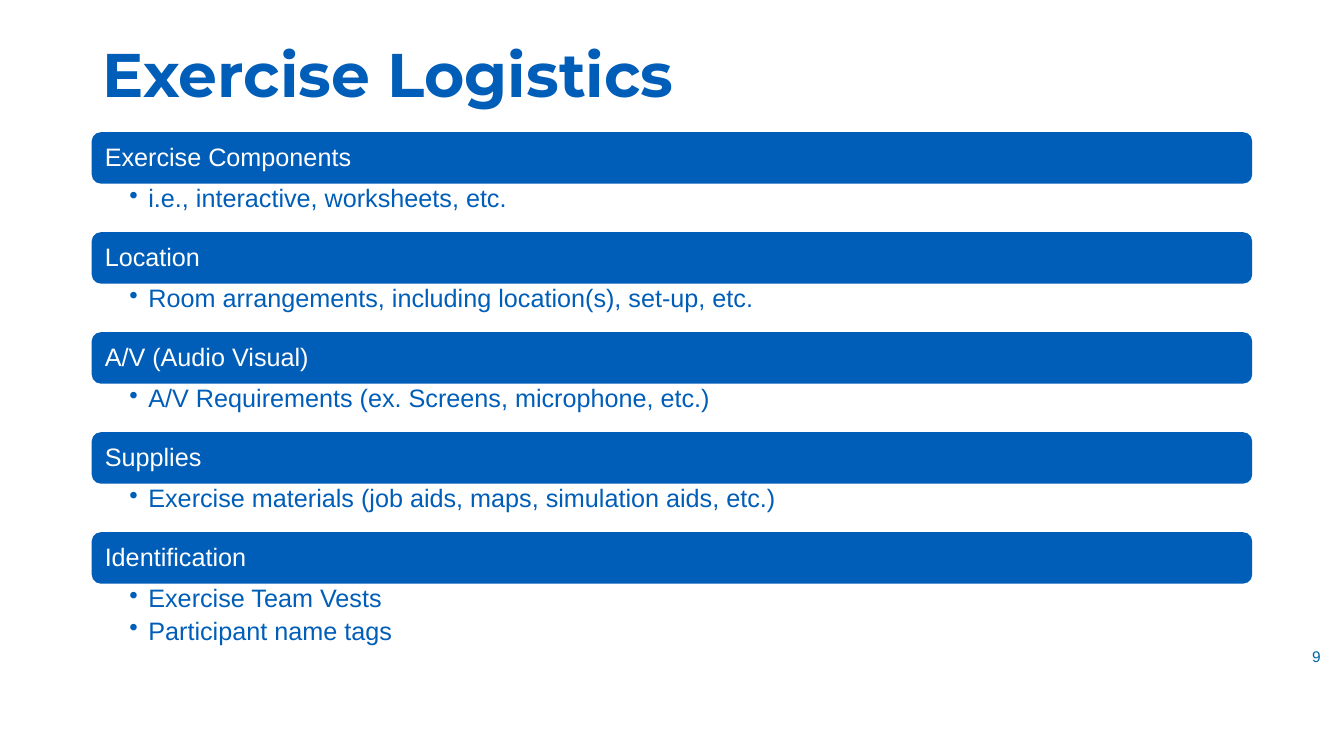
"""Build the Exercise Logistics slide."""
from dataclasses import dataclass
from typing import Any

import pptx
from lxml import etree
from pptx import util as u
from pptx.dml.color import RGBColor
from pptx.enum import shapes, text
from pptx.oxml import ns

BLUE = RGBColor(0x00, 0x5E, 0xB8)
NUMBER_BLUE = RGBColor(0x00, 0x63, 0xA6)
WHITE = RGBColor(0xFF, 0xFF, 0xFF)

LEFT, WIDTH = 2.33, 29.21
FIRST_TOP, PITCH = 3.35, 2.52
HEADING_HEIGHT = 1.26
BULLET_INDENT = u.Cm(0.48)


@dataclass(frozen=True)
class Topic:
    """A heading bar and the details under it."""
    heading: str
    details: tuple[str, ...]
    details_height: float = 1.26


@dataclass(frozen=True)
class Style:
    """Character and paragraph format of a text."""
    size: float
    color: RGBColor
    face: str = "Arial"
    bold: bool = False
    align: text.PP_ALIGN = text.PP_ALIGN.LEFT
    spacing: float = 0.9
    after: float = 0
    bulleted: bool = False


TITLE = Style(44, BLUE, face="Montserrat", bold=True)
HEADING = Style(18, WHITE)
DETAIL = Style(18, BLUE, after=4, bulleted=True)
NUMBER = Style(11, NUMBER_BLUE, align=text.PP_ALIGN.CENTER, spacing=1.0)

HEADING_FRAME = {
    "vertical_anchor": text.MSO_ANCHOR.MIDDLE,
    "margin_left": u.Cm(0.25), "margin_right": u.Cm(0.25),
    "margin_top": u.Cm(0.25), "margin_bottom": u.Cm(0.25),
}
DETAIL_FRAME = {
    "vertical_anchor": text.MSO_ANCHOR.TOP,
    "margin_left": u.Cm(0.93), "margin_right": u.Cm(0.36),
    "margin_top": u.Cm(0.08), "margin_bottom": u.Cm(0.08),
}
MIDDLE_FRAME = {"vertical_anchor": text.MSO_ANCHOR.MIDDLE}

TOPICS = (
    Topic("Exercise Components", ("i.e., interactive, worksheets, etc.",)),
    Topic("Location", ("Room arrangements, including location(s), set-up, etc.",)),
    Topic("A/V (Audio Visual)", ("A/V Requirements (ex. Screens, microphone, etc.)",)),
    Topic("Supplies", ("Exercise materials (job aids, maps, simulation aids, etc.)",)),
    Topic("Identification", ("Exercise Team Vests", "Participant name tags"), 1.52),
)


def set_all(target: Any, values: dict[str, Any]) -> None:
    """Set each named attribute of the target."""
    for name, value in values.items():
        setattr(target, name, value)


def add_bullet(paragraph: Any) -> None:
    """Give the paragraph a hanging round bullet."""
    paragraph.level = 1
    properties = paragraph._p.get_or_add_pPr()
    properties.set("marL", str(BULLET_INDENT))
    properties.set("indent", str(-BULLET_INDENT))
    etree.SubElement(properties, ns.qn("a:buChar")).set("char", "•")


def write(shape: Any, lines: tuple[str, ...], style: Style, frame: dict[str, Any]) -> None:
    """Fill a shape with one paragraph for each line."""
    body = shape.text_frame
    set_all(body, {"word_wrap": True, **frame})
    for index, line in enumerate(lines):
        paragraph = body.add_paragraph() if index else body.paragraphs[0]
        set_all(paragraph, {"alignment": style.align, "line_spacing": style.spacing,
                            "space_before": u.Pt(0), "space_after": u.Pt(style.after)})
        if style.bulleted:
            add_bullet(paragraph)
        run = paragraph.add_run()
        run.text = line
        set_all(run.font, {"name": style.face, "size": u.Pt(style.size), "bold": style.bold})
        run.font.color.rgb = style.color


def add_label(slide: Any, box: tuple[float, ...], lines: tuple[str, ...],
              style: Style, frame: dict[str, Any]) -> None:
    """Add a text box at left, top, width and height in centimetres."""
    write(slide.shapes.add_textbox(*map(u.Cm, box)), lines, style, frame)


def add_topic(slide: Any, topic: Topic, top: float) -> None:
    """Add a heading bar with its details below."""
    bar = slide.shapes.add_shape(shapes.MSO_SHAPE.ROUNDED_RECTANGLE,
                                 *map(u.Cm, (LEFT, top, WIDTH, HEADING_HEIGHT)))
    bar.shadow.inherit = False
    bar.fill.solid()
    bar.fill.fore_color.rgb = BLUE
    bar.line.color.rgb = BLUE
    bar.line.width = u.Pt(1)
    write(bar, (topic.heading,), HEADING, HEADING_FRAME)
    add_label(slide, (LEFT, top + HEADING_HEIGHT, WIDTH, topic.details_height),
              topic.details, DETAIL, DETAIL_FRAME)


def main() -> None:
    """Build and save the slide."""
    deck = pptx.Presentation()
    set_all(deck, {"slide_width": u.Cm(33.87), "slide_height": u.Cm(19.05)})
    slide = deck.slides.add_slide(deck.slide_layouts[6])
    add_label(slide, (32.49, 16.03, 1.37, 1.04), ("9",), NUMBER, MIDDLE_FRAME)
    add_label(slide, (LEFT, 0.58, WIDTH, 2.74), ("Exercise Logistics",), TITLE, MIDDLE_FRAME)
    for row, topic in enumerate(TOPICS):
        add_topic(slide, topic, FIRST_TOP + row * PITCH)
    deck.save("out.pptx")


if __name__ == "__main__":
    main()
